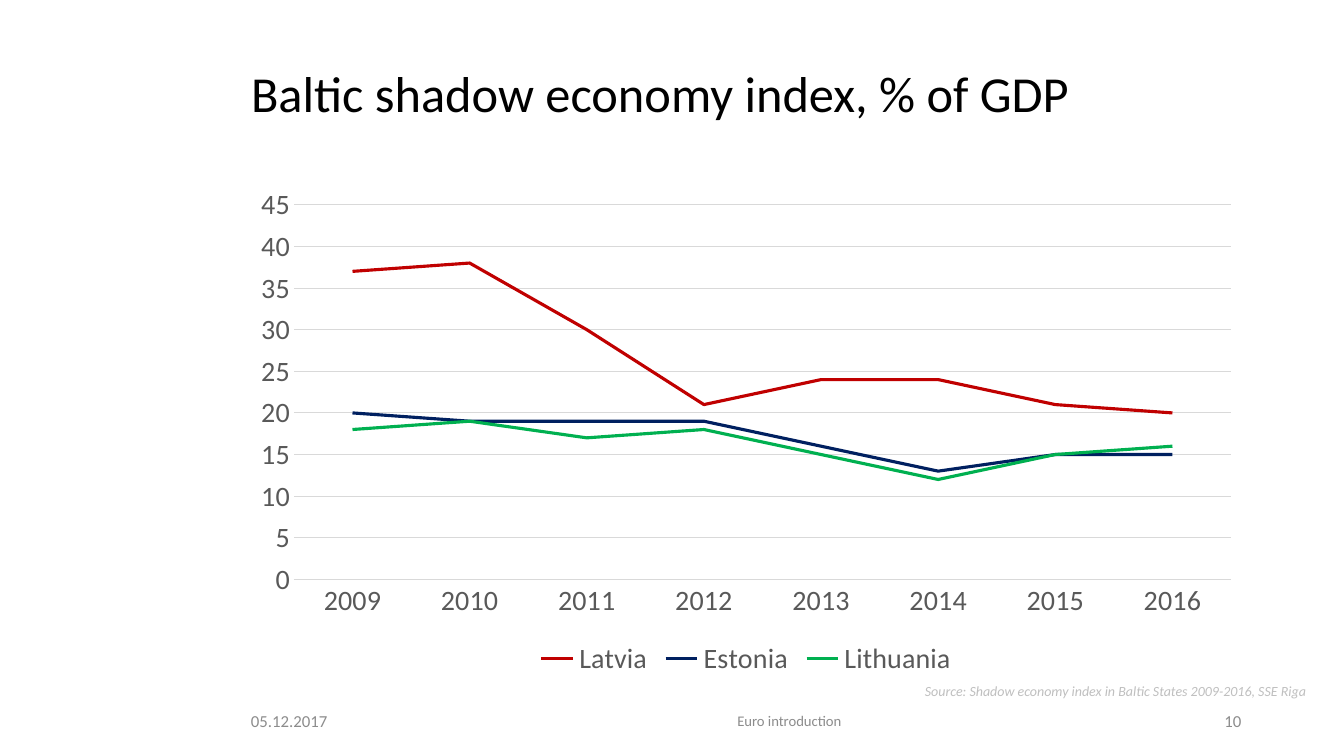
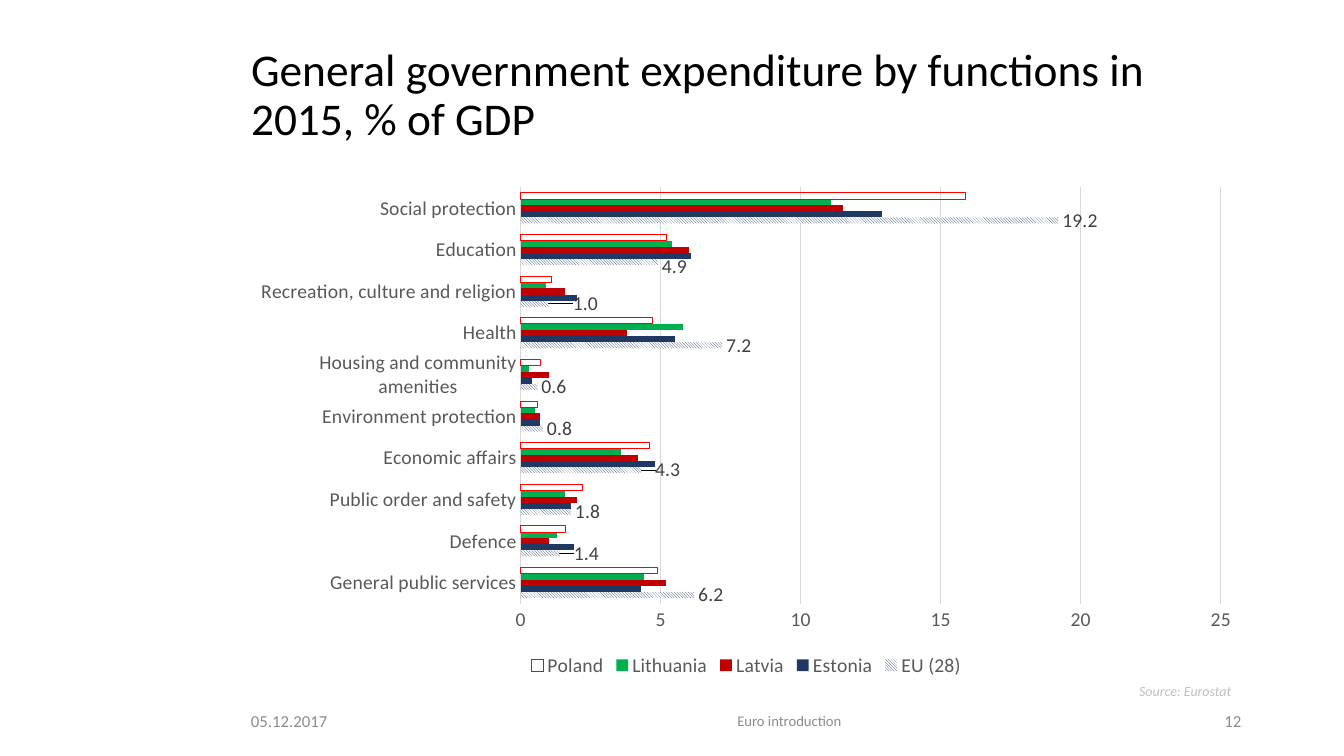
from lxml import etree
from pptx import Presentation
from pptx.chart.data import CategoryChartData
from pptx.dml.color import RGBColor
from pptx.enum.chart import XL_CHART_TYPE, XL_LABEL_POSITION, XL_LEGEND_POSITION, XL_TICK_MARK
from pptx.enum.dml import MSO_PATTERN
from pptx.enum.text import MSO_ANCHOR, MSO_AUTO_SIZE, PP_ALIGN
from pptx.oxml.ns import qn
from pptx.util import Inches, Pt

LEFT, CENTER, RIGHT = PP_ALIGN.LEFT, PP_ALIGN.CENTER, PP_ALIGN.RIGHT
OUTSIDE_END = XL_LABEL_POSITION.OUTSIDE_END

FONT = "Calibri"
BLACK = RGBColor(0x00, 0x00, 0x00)
WHITE = RGBColor(0xFF, 0xFF, 0xFF)
FOOTER_GREY = RGBColor(0x8C, 0x8C, 0x8C)
SOURCE_GREY = RGBColor(0xBF, 0xBF, 0xBF)
AXIS_GREY = RGBColor(0x59, 0x59, 0x59)
LABEL_GREY = RGBColor(0x40, 0x40, 0x40)
GRID_GREY = RGBColor(0xD9, 0xD9, 0xD9)
DARK_RED = RGBColor(0xC0, 0x00, 0x00)
RED = RGBColor(0xFF, 0x00, 0x00)
NAVY = RGBColor(0x00, 0x20, 0x60)
BLUE = RGBColor(0x20, 0x38, 0x64)
GREEN = RGBColor(0x00, 0xB0, 0x50)

MARGIN, CONTENT_WIDTH = 2.39, 10.02
FOOTER_TOP, FOOTER_HEIGHT = 6.95, 0.4
LABEL_FORMAT = "#,##0.0"

INDEX_YEARS = [str(year) for year in range(2009, 2017)]
INDEX_SERIES = [
    ("Latvia", DARK_RED, (37, 38, 30, 21, 24, 24, 21, 20)),
    ("Estonia", NAVY, (20, 19, 19, 19, 16, 13, 15, 15)),
    ("Lithuania", GREEN, (18, 19, 17, 18, 15, 12, 15, 16)),
]
FUNCTIONS = [
    "General public services", "Defence", "Public order and safety", "Economic affairs",
    "Environment protection", "Housing and community amenities", "Health",
    "Recreation, culture and religion", "Education", "Social protection",
]
SPENDING_SERIES = [
    ("EU (28)", BLUE, (6.2, 1.4, 1.8, 4.3, 0.8, 0.6, 7.2, 1, 4.9, 19.2)),
    ("Estonia", BLUE, (4.3, 1.9, 1.8, 4.8, 0.7, 0.4, 5.5, 2, 6.1, 12.9)),
    ("Latvia", DARK_RED, (5.2, 1, 2, 4.2, 0.7, 1, 3.8, 1.6, 6, 11.5)),
    ("Lithuania", GREEN, (4.4, 1.3, 1.6, 3.6, 0.5, 0.3, 5.8, 0.9, 5.4, 11.1)),
    ("Poland", RED, (4.9, 1.6, 2.2, 4.6, 0.6, 0.7, 4.7, 1.1, 5.2, 15.9)),
]
# Labels moved clear of longer neighbouring bars, as fractions of the chart size
LABEL_SHIFTS = {1: (0.01, 0), 3: (0.01, 0), 7: (0.02, 0), 8: (0, 0.01)}

SLIDES = [
    dict(title="Baltic shadow economy index, % of GDP", title_size=36, number="10",
         source="Source: Shadow economy index in Baltic States 2009-2016, SSE Riga",
         source_left=8.53, source_width=4.52, kind=XL_CHART_TYPE.LINE,
         categories=INDEX_YEARS, series=INDEX_SERIES, chart_size=20, axis_max=45),
    dict(title="General government expenditure by functions in 2015, % of GDP",
         title_size=32.4, number="12", source="Source: Eurostat",
         source_left=8.49, source_width=3.82, kind=XL_CHART_TYPE.BAR_CLUSTERED,
         categories=FUNCTIONS, series=SPENDING_SERIES, chart_size=14, axis_max=25),
]


def write(shape, text, *, size, color, align=LEFT, anchor=MSO_ANCHOR.MIDDLE,
          italic=False, line_spacing=1.0):
    frame = shape.text_frame
    frame.word_wrap = True
    frame.auto_size = MSO_AUTO_SIZE.NONE
    frame.vertical_anchor = anchor
    paragraph = frame.paragraphs[0]
    paragraph.alignment = align
    paragraph.line_spacing = line_spacing
    run = paragraph.add_run()
    run.text = text
    run.font.name, run.font.size = FONT, Pt(size)
    run.font.italic = italic
    run.font.color.rgb = color


def set_chart_font(font, size, color):
    font.name, font.size = FONT, Pt(size)
    font.color.rgb = color


prs = Presentation()
prs.slide_width, prs.slide_height = Inches(13.33), Inches(7.5)
charts = []

for content in SLIDES:
    slide = prs.slides.add_slide(prs.slide_layouts[5])
    title = slide.shapes.title
    title.left, title.top = Inches(MARGIN), Inches(0.4)
    title.width, title.height = Inches(CONTENT_WIDTH), Inches(1.11)
    write(title, content["title"], size=content["title_size"], color=BLACK, line_spacing=0.9)

    data = CategoryChartData(number_format="0.0")
    data.categories = content["categories"]
    for name, _, values in content["series"]:
        data.add_series(name, values)
    chart = slide.shapes.add_chart(content["kind"], Inches(MARGIN), Inches(1.76),
                                   Inches(CONTENT_WIDTH), Inches(5), data).chart
    charts.append(chart)
    size = content["chart_size"]
    set_chart_font(chart.font, size, BLACK)
    chart.has_title = False
    chart.has_legend = True
    chart.legend.position = XL_LEGEND_POSITION.BOTTOM
    chart.legend.include_in_layout = False
    set_chart_font(chart.legend.font, size, AXIS_GREY)
    chart.plots[0].vary_by_categories = False

    value_axis, category_axis = chart.value_axis, chart.category_axis
    for axis in (value_axis, category_axis):
        axis.major_tick_mark = axis.minor_tick_mark = XL_TICK_MARK.NONE
        set_chart_font(axis.tick_labels.font, size, AXIS_GREY)
    value_axis.minimum_scale, value_axis.maximum_scale = 0, content["axis_max"]
    value_axis.major_unit = 5
    value_axis.tick_labels.number_format = "0"
    value_axis.tick_labels.number_format_is_linked = False
    value_axis.format.line.fill.background()
    value_axis.has_major_gridlines = True
    category_axis.has_major_gridlines = False
    for line in (value_axis.major_gridlines.format.line, category_axis.format.line):
        line.color.rgb = GRID_GREY
        line.width = Pt(0.75)

    footers = [
        (MARGIN, 1.64, "05.12.2017", 12, LEFT),
        (4.31, 7.04, "Euro introduction", 10.5, CENTER),
        (11.62, 0.79, content["number"], 12, RIGHT),
    ]
    for left, width, text, text_size, align in footers:
        box = slide.shapes.add_textbox(Inches(left), Inches(FOOTER_TOP),
                                       Inches(width), Inches(FOOTER_HEIGHT))
        write(box, text, size=text_size, color=FOOTER_GREY, align=align)
    source = slide.shapes.add_textbox(Inches(content["source_left"]), Inches(6.72),
                                      Inches(content["source_width"]), Inches(0.27))
    write(source, content["source"], size=10, color=SOURCE_GREY, align=RIGHT,
          anchor=MSO_ANCHOR.TOP, italic=True)

index_chart, spending_chart = charts

for series, (_, color, _) in zip(index_chart.plots[0].series, INDEX_SERIES):
    series.smooth = False
    series.format.line.color.rgb = color
    series.format.line.width = Pt(2.25)

spending_plot = spending_chart.plots[0]
spending_plot.gap_width = 182
for series, (name, color, _) in zip(spending_plot.series, SPENDING_SERIES):
    series.invert_if_negative = False
    fill, line = series.format.fill, series.format.line
    if name == "Poland":
        fill.background()
        line.color.rgb = color
        line.width = Pt(0.75)
        continue
    line.fill.background()
    if name == "EU (28)":
        fill.patterned()
        fill.pattern = MSO_PATTERN.LIGHT_DOWNWARD_DIAGONAL
        fill.fore_color.rgb, fill.back_color.rgb = color, WHITE
    else:
        fill.solid()
        fill.fore_color.rgb = color

eu_series = spending_plot.series[0]
eu_labels = eu_series.data_labels
eu_labels.show_value = True
eu_labels.number_format = LABEL_FORMAT
eu_labels.number_format_is_linked = False
eu_labels.position = OUTSIDE_END
set_chart_font(eu_labels.font, 14, LABEL_GREY)
for index in LABEL_SHIFTS:
    label = eu_series.points[index].data_label
    set_chart_font(label.font, 14, LABEL_GREY)
    label.position = OUTSIDE_END

for label_xml in eu_series._element.iter(qn("c:dLbl")):
    index_xml = label_xml.find(qn("c:idx"))
    shift = LABEL_SHIFTS[int(index_xml.get("val"))]
    layout = etree.Element(qn("c:layout"))
    manual = etree.SubElement(layout, qn("c:manualLayout"))
    for axis_name, offset in zip("xy", shift):
        etree.SubElement(manual, qn(f"c:{axis_name}"), val=str(offset))
    number_format = etree.Element(qn("c:numFmt"), formatCode=LABEL_FORMAT, sourceLinked="0")
    index_xml.addnext(number_format)
    index_xml.addnext(layout)

prs.save("out.pptx")
